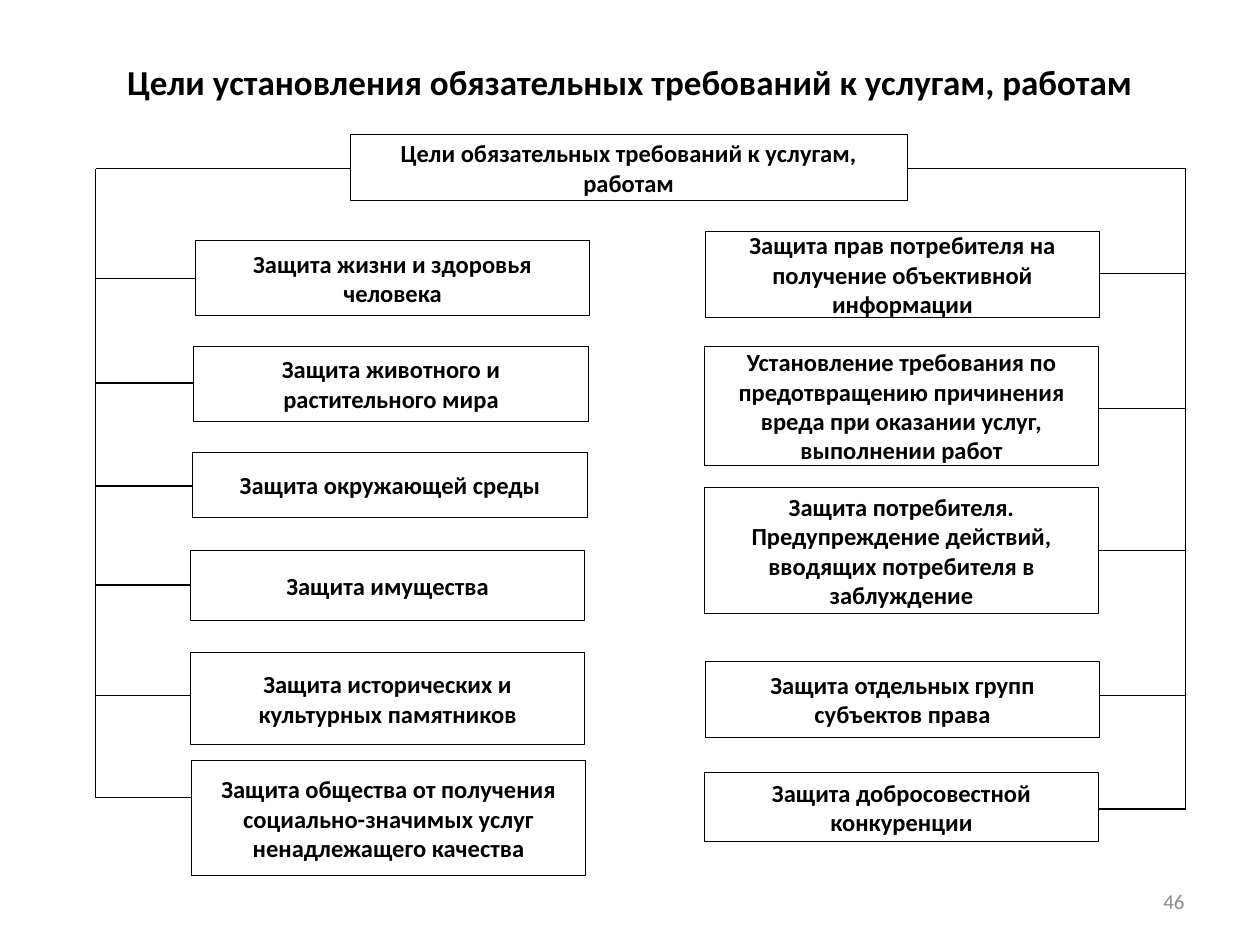
"""Build a slide showing the goals of mandatory requirements for services and works."""
from pptx import Presentation, util as u
from pptx.dml.color import RGBColor
from pptx.enum import shapes, text
from pptx.oxml.ns import qn
from lxml import etree

BLACK = RGBColor(0x00, 0x00, 0x00)
WHITE = RGBColor(0xFF, 0xFF, 0xFF)
GREY = RGBColor(0x8C, 0x8C, 0x8C)
FONT = "Calibri"
BOX_W = 7.95
TOP_Y = 3.4
LEFT_X, RIGHT_X = 1.93, 23.9

LEFT_GOALS = [
    (3.94, 4.85, 1.52, 5.61, "Защита жизни и здоровья человека"),
    (3.91, 6.99, 1.5, 7.72, "Защита животного и растительного мира"),
    (3.89, 9.12, 1.32, 9.8, "Защита окружающей среды"),
    (3.84, 11.1, 1.4, 11.79, "Защита имущества"),
    (3.84, 13.16, 1.85, 14.02, "Защита исторических и культурных памятников"),
    (3.86, 15.34, 2.31, 16.08,
     "Защита общества от получения социально-значимых услуг ненадлежащего качества"),
]
RIGHT_GOALS = [
    (14.22, 4.67, 1.73, 5.51, "Защита прав потребителя на получение объективной информации"),
    (14.2, 6.99, 2.39, 8.23,
     "Установление требования по предотвращению причинения вреда при оказании услуг, "
     "выполнении работ"),
    (14.2, 9.83, 2.54, 11.1,
     "Защита потребителя. Предупреждение действий, вводящих потребителя в заблуждение"),
    (14.22, 13.34, 1.52, 14.02, "Защита отдельных групп субъектов права"),
    (14.2, 15.57, 1.4, 16.31, "Защита добросовестной конкуренции"),
]

prs = Presentation()
prs.slide_width, prs.slide_height = u.Cm(25.4), u.Cm(19.05)
s = prs.slides.add_slide(prs.slide_layouts[5])


def write(sp, words, size, color, align, bold):
    tf = sp.text_frame
    tf.word_wrap = True
    tf.vertical_anchor = text.MSO_ANCHOR.MIDDLE
    p = tf.paragraphs[0]
    p.text = words
    p.alignment = align
    p.font.name, p.font.size, p.font.bold = FONT, u.Pt(size), bold
    p.font.color.rgb = color


title = s.shapes.title
title.left, title.top, title.width, title.height = u.Cm(1.27), u.Cm(0.76), u.Cm(22.86), u.Cm(1.75)
write(title, "Цели установления обязательных требований к услугам, работам",
      20, BLACK, text.PP_ALIGN.CENTER, True)

number = s.shapes.add_textbox(u.Cm(18.21), u.Cm(17.65), u.Cm(5.92), u.Cm(1.02))
write(number, "46", 12, GREY, text.PP_ALIGN.RIGHT, False)

lines = [(7.06, TOP_Y, LEFT_X, TOP_Y), (18.29, TOP_Y, RIGHT_X, TOP_Y)]
for rail_x, offset, goals in ((LEFT_X, 0, LEFT_GOALS), (RIGHT_X, BOX_W, RIGHT_GOALS)):
    lines.append((rail_x, TOP_Y, rail_x, goals[-1][3]))
    lines += [(x + offset, y, rail_x, y) for x, _, _, y, _ in goals]

for ends in lines:
    c = s.shapes.add_connector(shapes.MSO_CONNECTOR.STRAIGHT, *map(u.Cm, ends))
    c.line.color.rgb = BLACK
    c.line.width = u.Pt(0.75)
    etree.SubElement(c._element.spPr, qn("a:effectLst"))

boxes = [(7.06, 2.72, 11.23, 1.32, "Цели обязательных требований к услугам, работам")]
boxes += [(x, y, BOX_W, h, words) for x, y, h, _, words in LEFT_GOALS + RIGHT_GOALS]

for *place, words in boxes:
    sp = s.shapes.add_shape(shapes.MSO_SHAPE.RECTANGLE, *map(u.Cm, place))
    sp.shadow.inherit = False
    sp.fill.solid()
    sp.fill.fore_color.rgb = WHITE
    sp.line.color.rgb = BLACK
    sp.line.width = u.Pt(0.5)
    write(sp, words, 14, BLACK, text.PP_ALIGN.CENTER, True)

prs.save("out.pptx")
